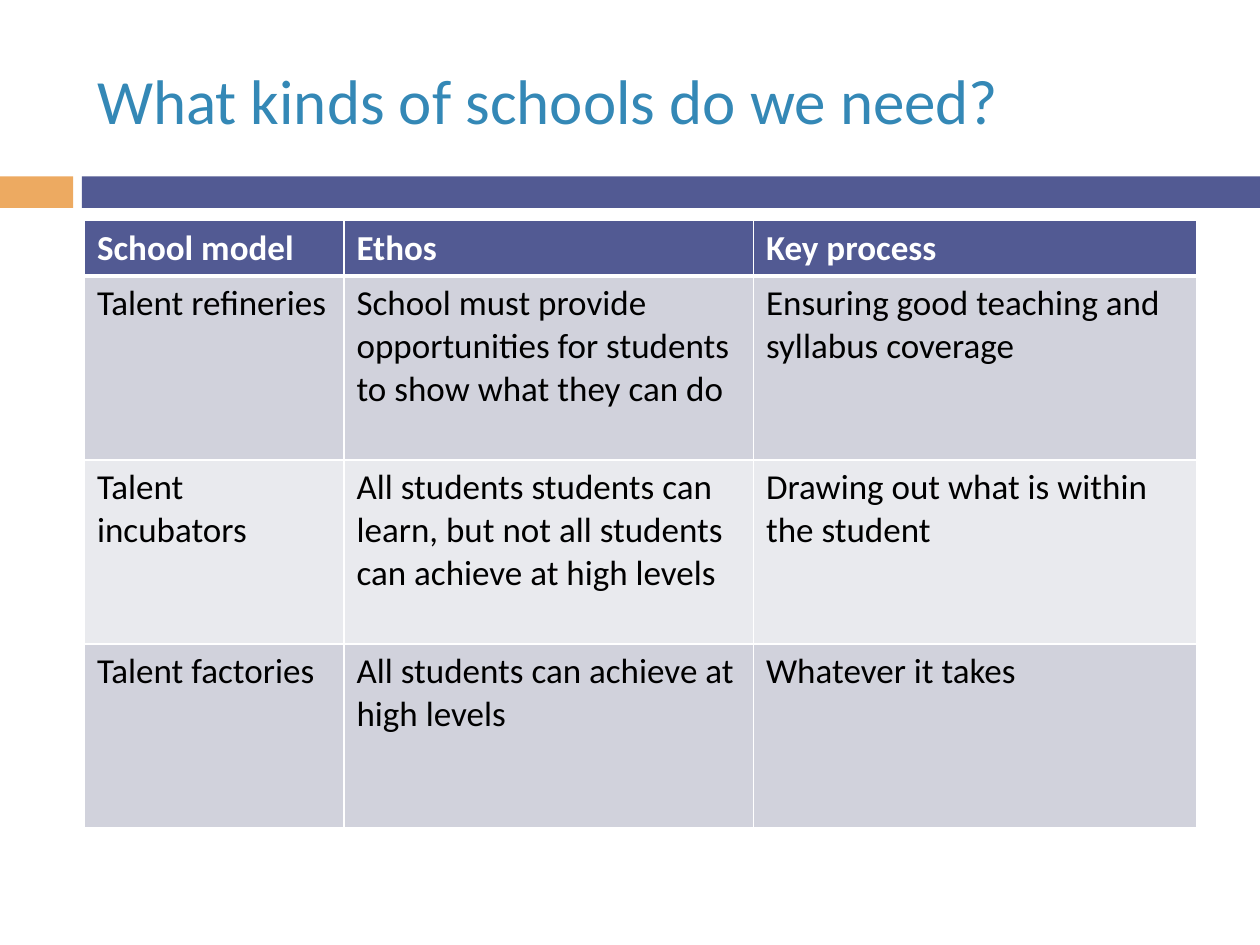
from lxml.etree import SubElement
from pptx import Presentation
from pptx.dml.color import RGBColor
from pptx.enum.shapes import MSO_SHAPE
from pptx.enum.text import MSO_ANCHOR, PP_ALIGN
from pptx.oxml import parse_xml
from pptx.oxml.ns import nsdecls, qn
from pptx.util import Inches, Pt

SLIDE_WIDTH, SLIDE_HEIGHT = 10, 7.5
ORANGE, INDIGO, BLUE = "EDAA61", "525A93", "3488B6"
WHITE, BLACK = "FFFFFF", "000000"
BANDS = ["D1D2DC", "E9EAEE"]

TITLE_FORMAT = {"name": "Calibri", "size": Pt(36), "bold": False}
HEADER_FORMAT = {"name": "Calibri", "size": Pt(20), "bold": True}
BODY_FORMAT = {**HEADER_FORMAT, "bold": False}

COLUMN_WIDTHS = [2.06, 3.25, 3.52]
HEADER_HEIGHT = 0.44
ROWS = [
    ["School model", "Ethos", "Key process"],
    ["Talent refineries",
     "School must provide opportunities for students to show what they can do",
     "Ensuring good teaching and syllabus coverage"],
    ["Talent incubators",
     "All students students can learn, but not all students can achieve at high levels",
     "Drawing out what is within the student"],
    ["Talent factories",
     "All students can achieve at high levels",
     "Whatever it takes"],
]


def set_fill(fill, color):
    fill.solid()
    fill.fore_color.rgb = RGBColor.from_string(color)


def write_text(text_frame, text, color, font_format):
    text_frame.text = text
    paragraph = text_frame.paragraphs[0]
    paragraph.alignment = PP_ALIGN.LEFT
    font = paragraph.runs[0].font
    for name, value in font_format.items():
        setattr(font, name, value)
    font.color.rgb = RGBColor.from_string(color)


def set_borders(cell, color, widths):
    """Put the border lines ahead of the cell's fill, as the schema asks."""
    properties = cell._tc.get_or_add_tcPr()
    for index, (side, width) in enumerate(widths.items()):
        line = parse_xml(f'<a:ln{side} {nsdecls("a")} w="{Pt(width)}"/>')
        solid = SubElement(line, qn("a:solidFill"))
        SubElement(solid, qn("a:srgbClr"), val=color)
        properties.insert(index, line)


def add_title(slide, box, text):
    title = slide.shapes.title
    title.left, title.top, title.width, title.height = map(Inches, box)
    title.text_frame.vertical_anchor = MSO_ANCHOR.MIDDLE
    write_text(title.text_frame, text, BLUE, TITLE_FORMAT)


def add_divider(slide, box):
    """A short orange block, a gap, then a bar to the right edge."""
    left, top, width, height = box
    block, gap = width * 0.058, width * 0.007
    bar_left = left + block + gap
    parts = [(left, block, ORANGE), (bar_left, left + width - bar_left, INDIGO)]
    for part_left, part_width, color in parts:
        shape = slide.shapes.add_shape(
            MSO_SHAPE.RECTANGLE, *map(Inches, (part_left, top, part_width, height)))
        shape.shadow.inherit = False
        set_fill(shape.fill, color)
        shape.line.fill.background()


def add_school_table(slide, box):
    frame = slide.shapes.add_table(len(ROWS), len(COLUMN_WIDTHS), *map(Inches, box))
    table = frame.table
    for column, width in zip(table.columns, COLUMN_WIDTHS):
        column.width = Inches(width)
    body_height = (box[3] - HEADER_HEIGHT) / (len(ROWS) - 1)

    for row_index, texts in enumerate(ROWS):
        is_header = row_index == 0
        table.rows[row_index].height = Inches(HEADER_HEIGHT if is_header else body_height)
        background = INDIGO if is_header else BANDS[(row_index - 1) % 2]
        color = WHITE if is_header else BLACK
        font_format = HEADER_FORMAT if is_header else BODY_FORMAT
        widths = {"L": 1, "R": 1, "T": 3 if row_index == 1 else 1, "B": 3 if is_header else 1}
        for column_index, text in enumerate(texts):
            cell = table.cell(row_index, column_index)
            set_fill(cell.fill, background)
            set_borders(cell, WHITE, widths)
            write_text(cell.text_frame, text, color, font_format)


def main():
    presentation = Presentation()
    presentation.slide_width = Inches(SLIDE_WIDTH)
    presentation.slide_height = Inches(SLIDE_HEIGHT)
    slide = presentation.slides.add_slide(presentation.slide_layouts[5])
    set_fill(slide.background.fill, WHITE)

    # Divider band across the slide
    add_divider(slide, (0, 1.4, SLIDE_WIDTH, 0.25))
    # Title above the band
    add_title(slide, (0.67, 0.25, 8.92, 1.08), "What kinds of schools do we need?")
    # School models below the band
    add_school_table(slide, (0.67, 1.75, sum(COLUMN_WIDTHS), 4.82))

    presentation.save("out.pptx")


if __name__ == "__main__":
    main()
